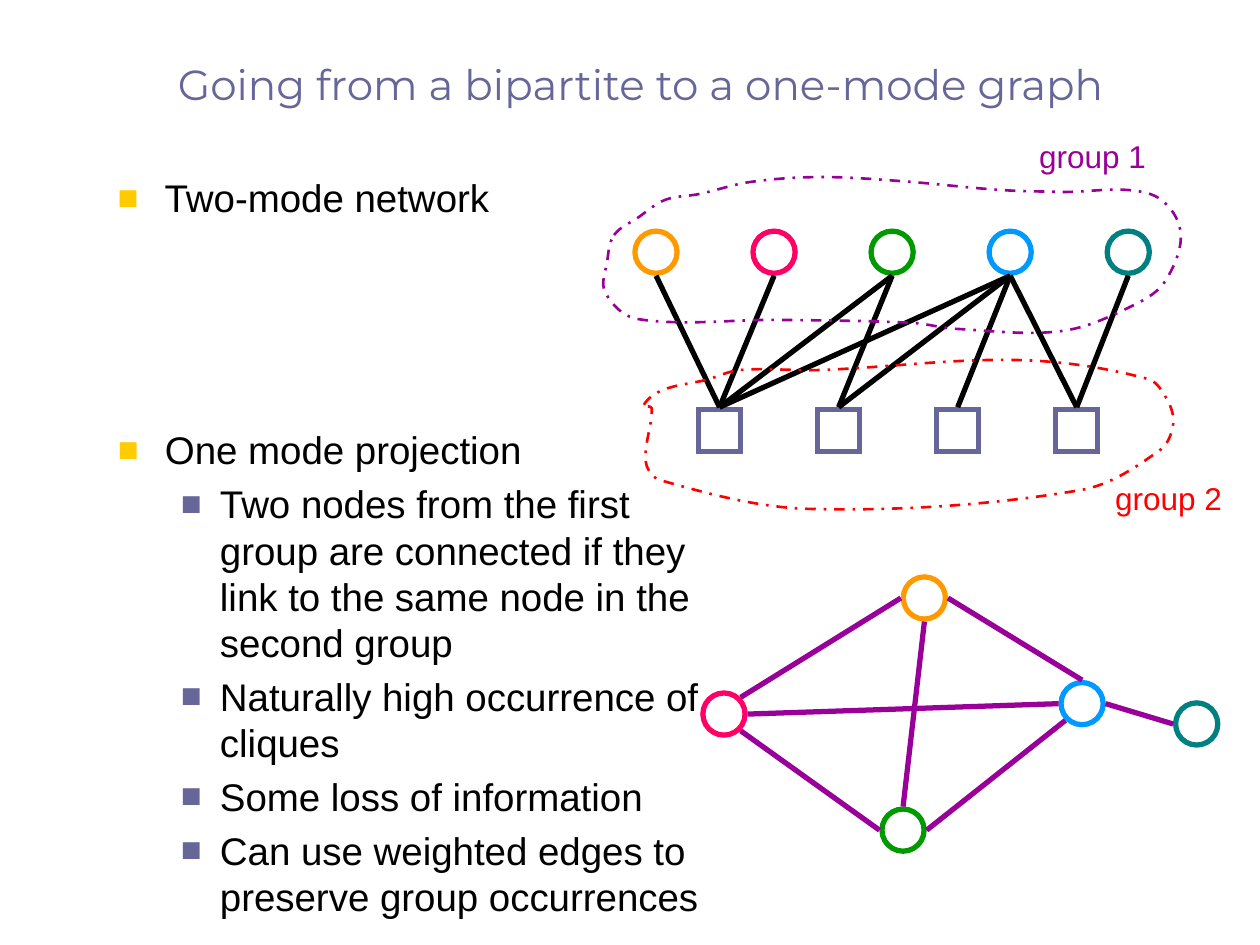
from dataclasses import dataclass
from math import dist

from lxml.etree import SubElement
from pptx import Presentation
from pptx.dml.color import RGBColor
from pptx.enum.dml import MSO_LINE
from pptx.enum.shapes import MSO_CONNECTOR, MSO_SHAPE
from pptx.enum.text import MSO_ANCHOR, MSO_AUTO_SIZE, PP_ALIGN
from pptx.oxml.ns import qn
from pptx.util import Cm, Pt


@dataclass(frozen=True)
class Theme:
    title_font: str = "Montserrat"
    body_font: str = "Arial"
    title_size: int = 24
    body_size: int = 22
    label_size: int = 18
    text: str = "000000"
    accent: str = "666699"
    bullet: str = "FFCC00"
    group_1: str = "990099"
    group_2: str = "FF0000"
    orange: str = "FF9900"
    pink: str = "FF0066"
    green: str = "009900"
    blue: str = "0099FF"
    teal: str = "008080"
    line_width: float = 3
    outline_width: float = 1.5


THEME = Theme()
NODE_NAMES = ("orange", "pink", "green", "blue", "teal")
NODE_SIZE = 0.85
EDGE_GAP = 0.05

# Index of the circle and of the square that each edge joins
BIPARTITE_EDGES = [(0, 0), (1, 0), (2, 0), (2, 1), (3, 2), (4, 3), (3, 0), (3, 3), (3, 1)]

PROJECTION_NODES = {"orange": (4.21, 0.13), "pink": (0.17, 2.47), "green": (3.78, 4.81),
                    "blue": (7.39, 2.26), "teal": (9.7, 2.67)}
PROJECTION_EDGES = [("orange", "W", "pink", "NE"), ("orange", "S", "green", "N"),
                    ("orange", "E", "blue", "N"), ("pink", "SE", "green", "W"),
                    ("blue", "SW", "green", "E"), ("teal", "W", "blue", "E"),
                    ("blue", "W", "pink", "E")]
DIRECTIONS = {"N": (0, -1), "S": (0, 1), "W": (-1, 0), "E": (1, 0),
              "NE": (0.71, -0.71), "SE": (0.71, 0.71), "SW": (-0.71, 0.71)}

GROUP_1_OUTLINE = [
    (0.38, 2.24), (0.86, 1.89), (1.41, 1.53), (2.11, 1.41), (3.12, 1.17), (4.53, 1.07),
    (6.14, 1.15), (8.16, 1.33), (9.37, 1.37), (11.18, 1.41), (11.79, 2.12),
    (11.51, 3.14), (10.9, 3.63), (9.43, 4.17), (7.27, 4.13), (6.39, 4.01), (3.72, 3.95),
    (0.84, 3.93), (0.2, 3.39), (0.24, 2.78)]
GROUP_2_OUTLINE = [
    (0.98, 5.66), (1.37, 5.36), (2.23, 5.16), (2.92, 4.96), (4.53, 4.96),
    (8.56, 4.76), (11.14, 5.14), (11.53, 5.56), (11.65, 6.05), (11.39, 6.57),
    (9.79, 7.38), (4.33, 7.76), (1.31, 7.18), (1.02, 6.81), (1.14, 5.73)]


def place(shape, left, top, width, height):
    shape.left, shape.top, shape.width, shape.height = map(Cm, (left, top, width, height))


def set_font(paragraph, name, size, color):
    paragraph.font.name = name
    paragraph.font.size = Pt(size)
    paragraph.font.color.rgb = RGBColor.from_string(color)


def set_line(shape, color, width=THEME.line_width):
    shape.line.color.rgb = RGBColor.from_string(color)
    shape.line.width = Pt(width)


def add_node(shapes, kind, left, top, color):
    node = shapes.add_shape(kind, Cm(left), Cm(top), Cm(NODE_SIZE), Cm(NODE_SIZE))
    node.shadow.inherit = False
    node.fill.background()
    set_line(node, color)
    SubElement(node._element.spPr.find(qn("a:ln")), qn("a:miter"), lim="800000")


def add_edge(shapes, start, end, color):
    edge = shapes.add_connector(MSO_CONNECTOR.STRAIGHT, *map(Cm, (*start, *end)))
    SubElement(edge._element.spPr, qn("a:effectLst"))
    set_line(edge, color)


def round_corners(outline):
    """Turn each straight segment of a closed outline into a smooth Bézier curve."""
    geometry = outline._element.spPr
    anchors = [(int(point.get("x")), int(point.get("y")))
               for point in geometry.iter(qn("a:pt"))][:-1]
    count = len(anchors)
    for index, segment in enumerate(list(geometry.iter(qn("a:lnTo")))):
        before, start, end, after = (anchors[(index + shift) % count]
                                     for shift in (-1, 0, 1, 2))
        reach = dist(start, end) / 3
        leaving, arriving = reach / dist(before, end), reach / dist(start, after)
        controls = ([s + (e - b) * leaving for b, s, e in zip(before, start, end)],
                    [e - (a - s) * arriving for s, e, a in zip(start, end, after)], end)
        curve = segment.makeelement(qn("a:cubicBezTo"))
        for x, y in controls:
            SubElement(curve, qn("a:pt"), x=str(round(x)), y=str(round(y)))
        segment.getparent().replace(segment, curve)


def add_group_outline(shapes, left, top, anchors, color):
    points = [(Cm(left + x), Cm(top + y)) for x, y in anchors]
    builder = shapes.build_freeform(*points[0])
    builder.add_line_segments(points[1:] + points[:1], close=True)
    outline = builder.convert_to_shape()
    round_corners(outline)
    outline.shadow.inherit = False
    outline.fill.background()
    set_line(outline, color, THEME.outline_width)
    outline.line.dash_style = MSO_LINE.DASH_DOT


def add_label(shapes, left, top, text, color):
    label = shapes.add_textbox(Cm(left), Cm(top), Cm(2.67), Cm(1.02))
    label.text_frame.word_wrap = False
    label.text_frame.auto_size = MSO_AUTO_SIZE.SHAPE_TO_FIT_TEXT
    paragraph = label.text_frame.paragraphs[0]
    paragraph.text = text
    set_font(paragraph, THEME.body_font, THEME.label_size, color)


def format_bullet(paragraph, level):
    margin, indent, color = [(0.95, -0.95, THEME.bullet), (2.06, -0.79, THEME.accent)][level]
    paragraph.level = level
    properties = paragraph._p.get_or_add_pPr()
    properties.set("marL", str(Cm(margin)))
    properties.set("indent", str(Cm(indent)))
    SubElement(SubElement(properties, qn("a:buClr")), qn("a:srgbClr"), val=color)
    SubElement(properties, qn("a:buSzPct"), val="90000")
    SubElement(properties, qn("a:buFont"), typeface=THEME.body_font)
    SubElement(properties, qn("a:buChar"), char="■")


def fill_list(shape, items):
    frame = shape.text_frame
    frame.word_wrap = True
    frame.auto_size = MSO_AUTO_SIZE.NONE
    for index, (level, text) in enumerate(items):
        paragraph = frame.add_paragraph() if index else frame.paragraphs[0]
        paragraph.text = text
        format_bullet(paragraph, level)
        paragraph.space_before = Pt(THEME.body_size * 0.2 if index else 0)
        set_font(paragraph, THEME.body_font, THEME.body_size, THEME.text)


def fill_title(title, box, text):
    place(title, *box)
    title.text_frame.vertical_anchor = MSO_ANCHOR.BOTTOM
    title.text_frame.auto_size = MSO_AUTO_SIZE.NONE
    paragraph = title.text_frame.paragraphs[0]
    paragraph.text = text
    paragraph.alignment = PP_ALIGN.CENTER
    set_font(paragraph, THEME.title_font, THEME.title_size, THEME.accent)


def add_bipartite_graph(shapes, left, top):
    circles = [(left + 0.8 + 2.38 * column, top + 2.16) for column in range(5)]
    squares = [(left + 2.08 + 2.4 * column, top + 5.76) for column in range(4)]
    for (x, y), name in zip(circles, NODE_NAMES):
        add_node(shapes, MSO_SHAPE.OVAL, x, y, getattr(THEME, name))
    for x, y in squares:
        add_node(shapes, MSO_SHAPE.RECTANGLE, x, y, THEME.accent)
    for circle, square in BIPARTITE_EDGES:
        (x1, y1), (x2, y2) = circles[circle], squares[square]
        add_edge(shapes, (x1 + NODE_SIZE / 2, y1 + NODE_SIZE + EDGE_GAP),
                 (x2 + NODE_SIZE / 2, y2 - EDGE_GAP), THEME.text)
    add_group_outline(shapes, left, top, GROUP_1_OUTLINE, THEME.group_1)
    add_label(shapes, left + 8.7, top + 0.14, "group 1", THEME.group_1)
    add_group_outline(shapes, left, top, GROUP_2_OUTLINE, THEME.group_2)
    add_label(shapes, left + 10.23, top + 7.03, "group 2", THEME.group_2)


def add_projection_graph(shapes, left, top):
    group = shapes.add_group_shape()
    radius = NODE_SIZE / 2

    def edge_end(name, direction):
        return [origin + offset + radius + (radius + EDGE_GAP) * step for origin, offset, step
                in zip((left, top), PROJECTION_NODES[name], DIRECTIONS[direction])]

    for name, (x, y) in PROJECTION_NODES.items():
        add_node(group.shapes, MSO_SHAPE.OVAL, left + x, top + y, getattr(THEME, name))
    for start, start_side, end, end_side in PROJECTION_EDGES:
        add_edge(group.shapes, edge_end(start, start_side), edge_end(end, end_side),
                 THEME.group_1)


def main():
    presentation = Presentation()
    presentation.slide_width, presentation.slide_height = Cm(25.4), Cm(19.05)
    slide = presentation.slides.add_slide(presentation.slide_layouts[1])
    shapes = slide.shapes
    fill_title(shapes.title, (1.48, 0.85, 22.86, 1.48),
               "Going from a bipartite to a one-mode graph")
    body = slide.placeholders[1]
    place(body, 2.12, 8.47, 12.4, 9.31)
    fill_list(body, [
        (0, "One mode projection"),
        (1, "Two nodes from the first group are connected if they link to the same node "
            "in the second group"),
        (1, "Naturally high occurrence of cliques"),
        (1, "Some loss of information"),
        (1, "Can use weighted edges to preserve group occurrences")])
    add_bipartite_graph(shapes, 12, 2.5)
    add_projection_graph(shapes, 14, 11.5)
    fill_list(shapes.add_textbox(Cm(2.12), Cm(3.39), Cm(10.37), Cm(9.31)),
              [(0, "Two-mode network")])
    presentation.save("out.pptx")


if __name__ == "__main__":
    main()
